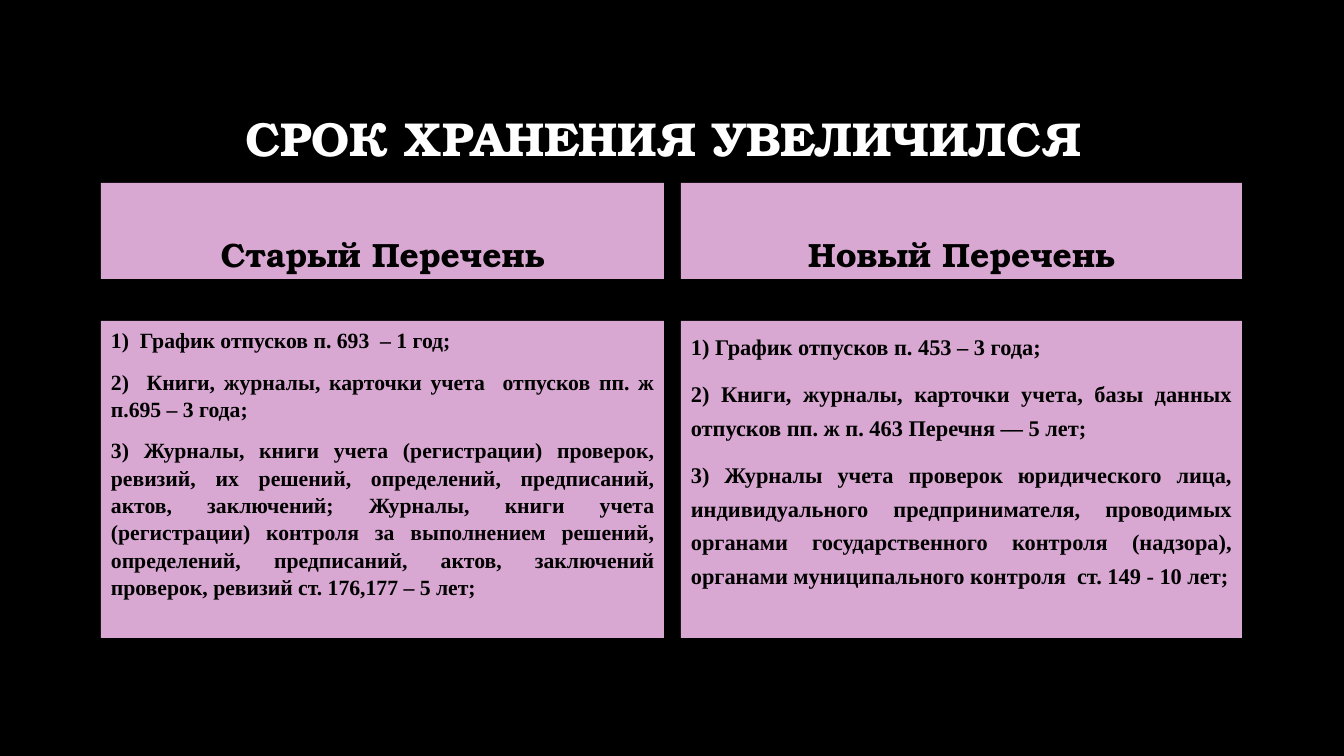
from pptx import Presentation
from pptx.dml.color import RGBColor
from pptx.enum.shapes import MSO_SHAPE as SHAPE
from pptx.enum.text import MSO_ANCHOR as ANCHOR, PP_ALIGN as ALIGN
from pptx.util import Emu, Pt

BLACK = RGBColor(0x00, 0x00, 0x00)
WHITE = RGBColor(0xFF, 0xFF, 0xFF)
PINK = RGBColor(0xD9, 0xA8, 0xD2)
HEAD_FONT = "TeX Gyre Bonum"
BODY_FONT = "Times New Roman"

# Rows shared by both columns: top, height
HEADER_ROW = (183, 96)
LIST_ROW = (321, 317)

# left, width, heading, body size, line spacing, items
COLUMNS = [
    (101, 563, "Старый Перечень", 15.5, 1.05, [
        "1)  График отпусков п. 693  – 1 год;",
        "2)  Книги, журналы, карточки учета  отпусков пп. ж п.695 – 3 года;",
        "3) Журналы, книги учета (регистрации) проверок, ревизий, их решений, "
        "определений, предписаний, актов, заключений; Журналы, книги учета "
        "(регистрации) контроля за выполнением решений, определений, "
        "предписаний, актов, заключений проверок, ревизий ст. 176,177 – 5 лет;",
    ]),
    (681, 561, "Новый Перечень", 16, 1.25, [
        "1) График отпусков п. 453 – 3 года;",
        "2) Книги, журналы, карточки учета, базы данных отпусков пп. ж п. 463 "
        "Перечня — 5 лет;",
        "3) Журналы учета проверок юридического лица, индивидуального "
        "предпринимателя, проводимых органами государственного контроля "
        "(надзора), органами муниципального контроля  ст. 149 - 10 лет;",
    ]),
]


def px(n):
    return Emu(round(n * 914400 / 100.8))


def write(sp, lines, font, size, color, align, anchor, spacing=1.0, before=0):
    tf = sp.text_frame
    tf.word_wrap = True
    tf.vertical_anchor = anchor
    tf.text = "\n".join(lines)
    for p in tf.paragraphs:
        p.alignment = align
        p.line_spacing = spacing
        p.space_before = Pt(before)
        for r in p.runs:
            r.font.name = font
            r.font.size = Pt(size)
            r.font.bold = True
            r.font.color.rgb = color


def add_panel(s, left, top, width, height):
    sp = s.shapes.add_shape(SHAPE.RECTANGLE, px(left), px(top), px(width), px(height))
    sp.shadow.inherit = False
    sp.fill.solid()
    sp.fill.fore_color.rgb = PINK
    sp.line.fill.background()
    return sp


def add_title(s, text):
    sp = s.shapes.add_textbox(px(101), px(68), px(1141), px(146))
    write(sp, [text], HEAD_FONT, 34, WHITE, ALIGN.CENTER, ANCHOR.MIDDLE, 0.9)


def add_column(s, left, width, heading, size, spacing, items):
    top, height = HEADER_ROW
    header = add_panel(s, left, top, width, height)
    write(header, [heading], HEAD_FONT, 24, BLACK, ALIGN.CENTER, ANCHOR.BOTTOM)

    top, height = LIST_ROW
    body = add_panel(s, left, top, width, height)
    write(body, items, BODY_FONT, size, BLACK, ALIGN.JUSTIFY, ANCHOR.TOP, spacing, 10)


def main():
    prs = Presentation()
    prs.slide_width, prs.slide_height = px(1344), px(756)
    s = prs.slides.add_slide(prs.slide_layouts[6])

    # Background
    s.background.fill.solid()
    s.background.fill.fore_color.rgb = BLACK

    # Title and the two compared lists
    add_title(s, "СРОК ХРАНЕНИЯ УВЕЛИЧИЛСЯ ")
    for column in COLUMNS:
        add_column(s, *column)

    prs.save("out.pptx")


if __name__ == "__main__":
    main()
